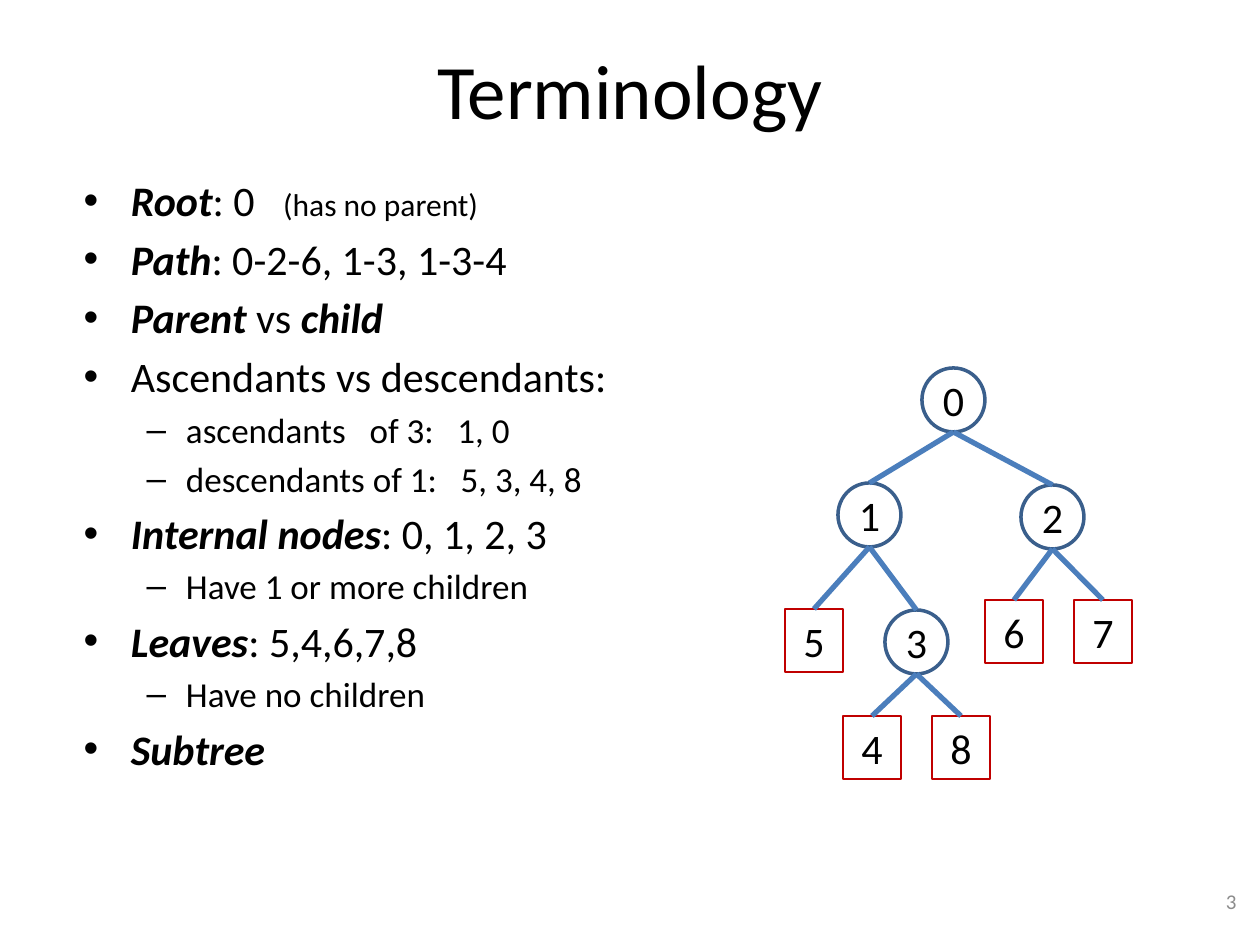
from dataclasses import dataclass

from lxml.etree import SubElement
from pptx import Presentation
from pptx.dml.color import RGBColor
from pptx.enum.shapes import MSO_CONNECTOR, MSO_SHAPE
from pptx.enum.text import MSO_ANCHOR, MSO_AUTO_SIZE, PP_ALIGN
from pptx.oxml.ns import qn
from pptx.util import Pt

PX = 914400 // 126


@dataclass(frozen=True)
class Theme:
    font: str = "Calibri"
    text: str = "000000"
    muted: str = "8C8C8C"
    circle: str = "3A5F8C"
    leaf: str = "C00000"
    edge: str = "4B7EBC"
    title_size: int = 44
    body_size: int = 24
    sub_size: int = 20
    note_size: int = 18
    number_size: int = 12
    circle_line: float = 2
    leaf_line: float = 0.75
    edge_line: float = 3


THEME = Theme()

TERMS = [
    (0, [("Root", True), (": 0   ", False), ("(has no parent)", False, THEME.note_size)]),
    (0, [("Path", True), (": 0-2-6, 1-3, 1-3-4", False)]),
    (0, [("Parent", True), (" vs ", False), ("child", True)]),
    (0, [("Ascendants vs descendants:", False)]),
    (1, [("ascendants   of 3:   1, 0", False)]),
    (1, [("descendants of 1:   5, 3, 4, 8", False)]),
    (0, [("Internal nodes", True), (": 0, 1, 2, 3", False)]),
    (1, [("Have 1 or more children", False)]),
    (0, [("Leaves", True), (": 5,4,6,7,8", False)]),
    (1, [("Have no children", False)]),
    (0, [("Subtree", True)]),
]

INTERNAL = {"0": (922, 368), "1": (838, 483), "2": (1021, 485), "3": (885, 610)}
LEAVES = {"5": (785, 609), "6": (985, 600), "7": (1074, 600), "4": (843, 716), "8": (932, 716)}
CHILDREN = {"0": "12", "1": "53", "2": "67", "3": "48"}


def px(*lengths):
    return [n * PX for n in lengths]


def place(sp, *box):
    sp.left, sp.top, sp.width, sp.height = px(*box)


def add_run(p, text, size, color=THEME.text, strong=False):
    r = p.add_run()
    r.text = text
    r.font.name = THEME.font
    r.font.size = Pt(size)
    r.font.bold = r.font.italic = strong
    r.font.color.rgb = RGBColor.from_string(color)


def set_line(sp, color, width):
    sp.line.color.rgb = RGBColor.from_string(color)
    sp.line.width = Pt(width)


def fill_title(s, text):
    sp = s.shapes.title
    place(sp, 63, 10, 1134, 158)
    tf = sp.text_frame
    tf.vertical_anchor = MSO_ANCHOR.MIDDLE
    p = tf.paragraphs[0]
    p.alignment = PP_ALIGN.CENTER
    add_run(p, text, THEME.title_size)


def fill_terms(s, terms):
    sp = s.placeholders[1]
    place(sp, 71, 168, 641, 650)
    tf = sp.text_frame
    tf.auto_size = MSO_AUTO_SIZE.NONE
    for i, (level, runs) in enumerate(terms):
        p = tf.add_paragraph() if i else tf.paragraphs[0]
        p.level = level
        default = THEME.sub_size if level else THEME.body_size
        for text, strong, *size in runs:
            add_run(p, text, size[0] if size else default, strong=strong)


def add_node(s, kind, label, box, color, width):
    sp = s.shapes.add_shape(kind, *px(*box))
    sp.shadow.inherit = False
    sp.fill.background()
    set_line(sp, color, width)
    tf = sp.text_frame
    tf.margin_left = tf.margin_right = tf.margin_top = tf.margin_bottom = 0
    tf.word_wrap = False
    tf.vertical_anchor = MSO_ANCHOR.MIDDLE
    p = tf.paragraphs[0]
    p.alignment = PP_ALIGN.CENTER
    add_run(p, label, THEME.body_size)
    return sp


def add_edge(s, parent, child):
    x, y = parent.left + parent.width // 2, parent.top + parent.height
    line = s.shapes.add_connector(MSO_CONNECTOR.STRAIGHT, x, y, child.left, child.top)
    line.end_connect(child, 0)
    set_line(line, THEME.edge, THEME.edge_line)
    SubElement(line._element.spPr, qn("a:effectLst"))


def add_tree(s):
    nodes = {}
    for label, (x, y) in INTERNAL.items():
        nodes[label] = add_node(s, MSO_SHAPE.OVAL, label, (x, y, 63, 64),
                                THEME.circle, THEME.circle_line)
    for label, (x, y) in LEAVES.items():
        nodes[label] = add_node(s, MSO_SHAPE.RECTANGLE, label, (x, y, 58, 63),
                                THEME.leaf, THEME.leaf_line)
    for parent, children in CHILDREN.items():
        for child in children:
            add_edge(s, nodes[parent], nodes[child])


def add_page_number(s, text):
    tf = s.shapes.add_textbox(*px(955, 876, 294, 50)).text_frame
    tf.word_wrap = True
    tf.vertical_anchor = MSO_ANCHOR.MIDDLE
    p = tf.paragraphs[0]
    p.alignment = PP_ALIGN.RIGHT
    add_run(p, text, THEME.number_size, THEME.muted)


def main():
    prs = Presentation()
    prs.slide_width, prs.slide_height = px(1260, 945)
    s = prs.slides.add_slide(prs.slide_layouts[1])
    fill_title(s, "Terminology")
    fill_terms(s, TERMS)
    add_page_number(s, "3")
    add_tree(s)
    prs.save("out.pptx")


if __name__ == "__main__":
    main()
